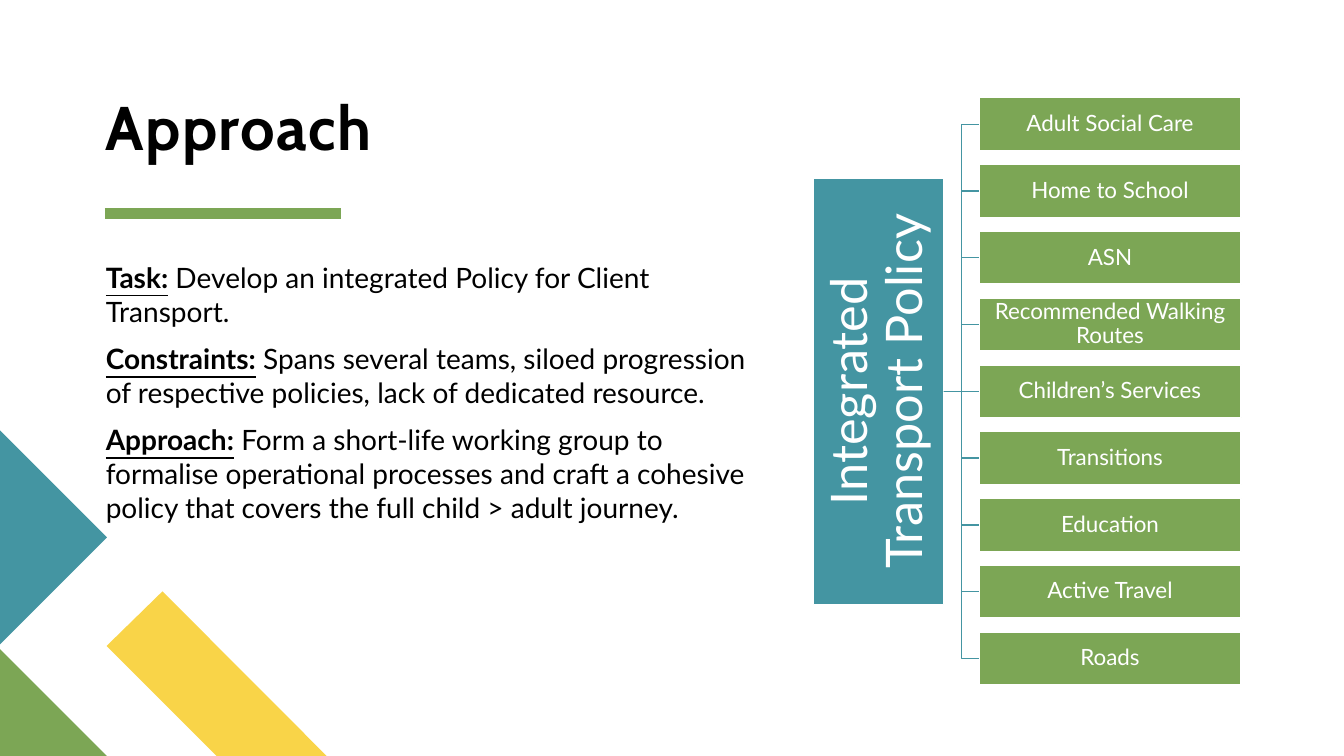
"""Build the Approach slide with its integrated transport policy tree."""
from dataclasses import dataclass

from lxml.etree import SubElement
from pptx import Presentation
from pptx.dml.color import RGBColor
from pptx.enum.shapes import MSO_CONNECTOR, MSO_SHAPE
from pptx.enum.text import MSO_ANCHOR, PP_ALIGN
from pptx.oxml.ns import qn
from pptx.util import Inches, Pt


@dataclass(frozen=True)
class Theme:
    """Colours, fonts and type sizes of the slide."""
    teal: str = "4495A2"
    green: str = "7CA655"
    yellow: str = "F9D448"
    black: str = "000000"
    white: str = "FFFFFF"
    heading_font: str = "Cabin"
    text_font: str = "Lato"
    title_size: int = 44
    root_size: int = 36
    body_size: int = 20
    box_size: int = 16


THEME = Theme()
COLUMNS, ROWS = 160, 90
WIDTH, HEIGHT = Inches(13.33), Inches(7.5)

STATEMENTS = [
    ("Task:", " Develop an integrated Policy for Client Transport."),
    ("Constraints:", " Spans several teams, siloed progression of respective policies, "
                     "lack of dedicated resource."),
    ("Approach:", " Form a short-life working group to formalise operational processes "
                  "and craft a cohesive policy that covers the full child > adult journey."),
]
POLICY_AREAS = [
    "Adult Social Care", "Home to School", "ASN", "Recommended Walking Routes",
    "Children’s Services", "Transitions", "Education", "Active Travel", "Roads",
]
CORNER_SHAPES = [
    (THEME.yellow, [(25.8, 90), (12.7, 76.9), (19.35, 70.4), (38.9, 90)]),
    (THEME.green, [(0, 90), (0, 77.26), (12.74, 90)]),
    (THEME.teal, [(0, 51.24), (12.74, 63.98), (0, 76.72)]),
]


def across(columns):
    """Turn grid columns into a length."""
    return round(WIDTH * columns / COLUMNS)


def down(rows):
    """Turn grid rows into a length."""
    return round(HEIGHT * rows / ROWS)


def area(left, top, width, height):
    """Turn a grid area into left, top, width and height."""
    return across(left), down(top), across(width), down(height)


def add_span(para, text, font=THEME.text_font, size=THEME.body_size,
             colour=THEME.black, bold=False, underline=False, spacing=None):
    """Add a formatted run of text to a paragraph."""
    span = para.add_run()
    span.text = text
    span.font.name = font
    span.font.size = Pt(size)
    span.font.color.rgb = RGBColor.from_string(colour)
    span.font.bold = bold
    span.font.underline = underline
    if spacing:
        span.font._element.set("spc", str(spacing))


def set_frame(frame, anchor=MSO_ANCHOR.TOP, margin=0):
    """Make a text frame wrap, with one anchor and equal margins."""
    frame.word_wrap = True
    frame.vertical_anchor = anchor
    frame.margin_left = frame.margin_right = Inches(margin)
    frame.margin_top = frame.margin_bottom = Inches(margin)


def add_corner_shape(page, colour, points):
    """Draw a filled polygon through grid points."""
    corners = [(across(column), down(row)) for column, row in points]
    builder = page.shapes.build_freeform(*corners[0], scale=1.0)
    builder.add_line_segments(corners[1:], close=True)
    shape = builder.convert_to_shape()
    shape.shadow.inherit = False
    shape.fill.solid()
    shape.fill.fore_color.rgb = RGBColor.from_string(colour)
    shape.line.fill.background()


def add_line(page, kind, start, end, colour, weight):
    """Draw a connector without a shadow between two points."""
    line = page.shapes.add_connector(kind, *start, *end)
    line.line.color.rgb = RGBColor.from_string(colour)
    line.line.width = Pt(weight)
    SubElement(line._element.spPr, qn("a:effectLst"))
    return line


def add_box(page, place, text, fill, size, margin):
    """Draw a filled rectangle with centred white text."""
    box = page.shapes.add_shape(MSO_SHAPE.RECTANGLE, *place)
    box.shadow.inherit = False
    box.fill.solid()
    box.fill.fore_color.rgb = RGBColor.from_string(fill)
    box.line.color.rgb = RGBColor.from_string(THEME.white)
    box.line.width = Pt(1)
    set_frame(box.text_frame, MSO_ANCHOR.MIDDLE, margin)
    para = box.text_frame.paragraphs[0]
    para.alignment = PP_ALIGN.CENTER
    para.line_spacing = 0.9
    add_span(para, text, size=size, colour=THEME.white)
    return box


def join(page, root, branch):
    """Join the right side of the root to the left side of a branch."""
    start = root.left + root.width, root.top + root.height // 2
    end = branch.left, branch.top + branch.height // 2
    level = abs(start[1] - end[1]) < down(0.1)
    kind = MSO_CONNECTOR.STRAIGHT if level else MSO_CONNECTOR.ELBOW
    line = add_line(page, kind, start, end, THEME.teal, 1)
    line.begin_connect(root, 3)
    line.end_connect(branch, 1)


def add_title(page, text):
    """Place and format the title."""
    title = page.shapes.title
    title.left, title.top, title.width, title.height = area(12.6, 11.5, 64.8, 8.05)
    set_frame(title.text_frame, MSO_ANCHOR.BOTTOM)
    para = title.text_frame.paragraphs[0]
    para.alignment = PP_ALIGN.LEFT
    para.line_spacing = 0.9
    add_span(para, text, font=THEME.heading_font, size=THEME.title_size,
             bold=True, spacing=100)


def add_statements(page, statements):
    """Write the labelled statements as paragraphs of one text box."""
    frame = page.shapes.add_textbox(*area(12.6, 31, 77.3, 36.7)).text_frame
    set_frame(frame)
    for index, (label, text) in enumerate(statements):
        para = frame.add_paragraph() if index else frame.paragraphs[0]
        para.space_before = Pt(10)
        add_span(para, label, bold=True, underline=True)
        add_span(para, text)


def add_policy_tree(page, root_text, branch_texts):
    """Draw the upright root box and its evenly spaced branches."""
    root = add_box(page, area(96.85, 21.21, 15.48, 50.76), root_text,
                   THEME.teal, THEME.root_size, 0.03)
    root.text_frame._txBody.bodyPr.set("vert", "vert270")
    for index, text in enumerate(branch_texts):
        place = area(116.55, 11.64 + 7.95 * index, 31.2, 6.3)
        branch = add_box(page, place, text, THEME.green, THEME.box_size, 0.01)
        join(page, root, branch)


def main():
    """Build and save the deck."""
    deck = Presentation()
    deck.slide_width, deck.slide_height = WIDTH, HEIGHT
    page = deck.slides.add_slide(deck.slide_layouts[5])
    for colour, points in CORNER_SHAPES:
        add_corner_shape(page, colour, points)
    add_line(page, MSO_CONNECTOR.STRAIGHT, (across(12.5), down(25.45)),
             (across(40.55), down(25.45)), THEME.green, 8)
    add_title(page, "Approach")
    add_statements(page, STATEMENTS)
    add_policy_tree(page, "Integrated Transport Policy", POLICY_AREAS)
    deck.save("out.pptx")


if __name__ == "__main__":
    main()
